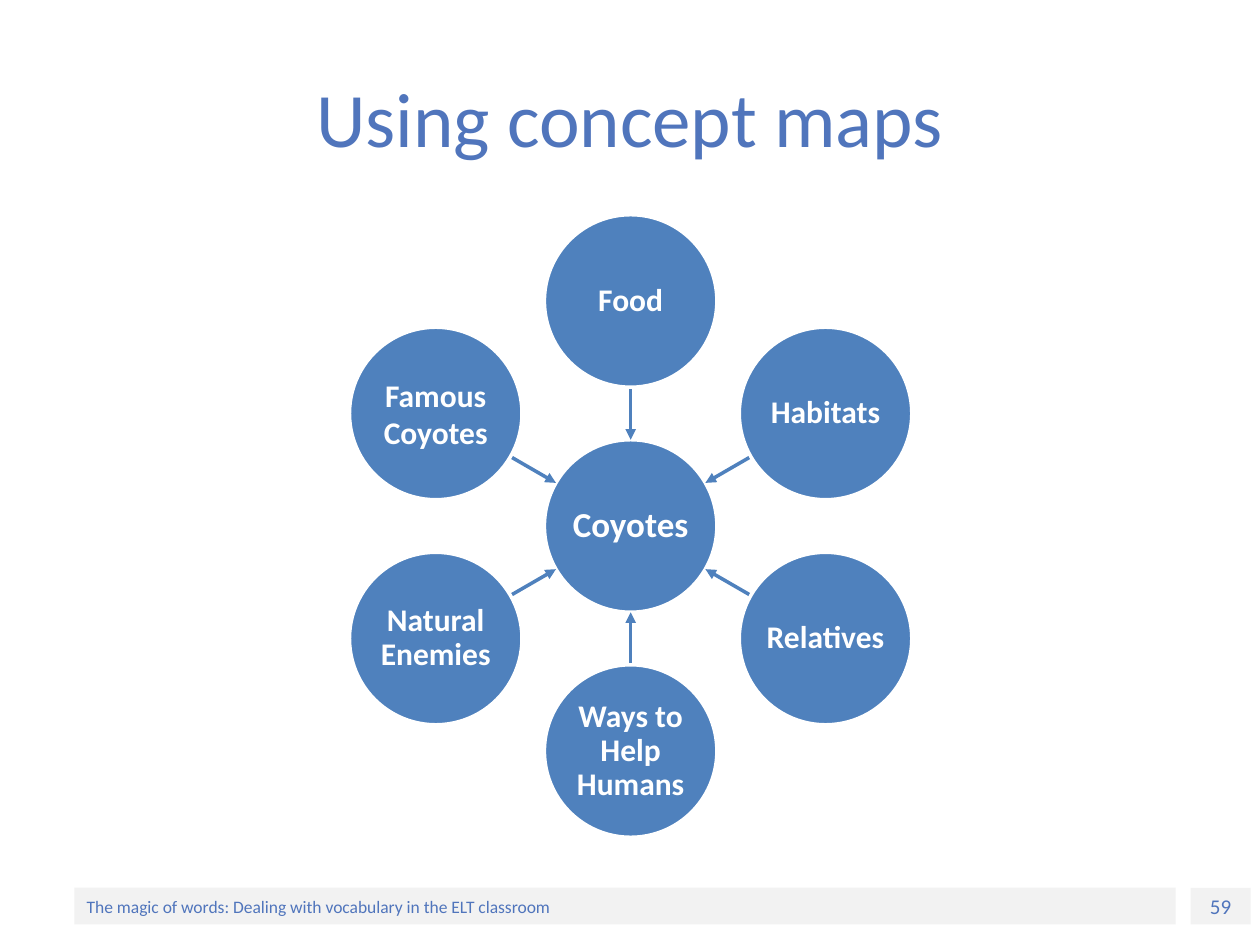
import math
from dataclasses import dataclass

import pptx
import pptx.dml.color
import pptx.enum.shapes
import pptx.enum.text
import pptx.util
from lxml import etree
from pptx.oxml.ns import qn

Pt = pptx.util.Pt
Align = pptx.enum.text.PP_ALIGN
Anchor = pptx.enum.text.MSO_ANCHOR
ShapeKind = pptx.enum.shapes.MSO_SHAPE


@dataclass(frozen=True)
class Theme:
    font: str = "Calibri"
    heading: str = "5075BC"
    circle: str = "4F81BD"
    white: str = "FFFFFF"
    bar: str = "F2F2F2"
    title_size: int = 44
    hub_size: int = 20
    topic_size: int = 18
    number_size: int = 12
    footer_size: int = 10
    line_width: int = 2


def rgb(value):
    return pptx.dml.color.RGBColor.from_string(value)


def write_text(shape, text, *, font, size, color, bold=False, align=Align.LEFT,
               anchor=Anchor.MIDDLE, spacing=None, inset=None):
    frame = shape.text_frame
    frame.word_wrap = True
    frame.vertical_anchor = anchor
    if inset is not None:
        frame.margin_left = frame.margin_right = Pt(inset)
        frame.margin_top = frame.margin_bottom = Pt(inset)
    paragraph = frame.paragraphs[0]
    paragraph.alignment = align
    if spacing:
        paragraph.line_spacing = spacing
    run = paragraph.add_run()
    run.text = text
    run.font.name = font
    run.font.size = Pt(size)
    run.font.bold = bold
    run.font.color.rgb = rgb(color)


class SlideBuilder:
    def __init__(self, slide, theme):
        self.slide = slide
        self.theme = theme

    def title(self, text, left, top, width, height):
        box = self.slide.shapes.add_textbox(Pt(left), Pt(top), Pt(width), Pt(height))
        write_text(box, text, font=self.theme.font, size=self.theme.title_size,
                   color=self.theme.heading, align=Align.CENTER)

    def filled_shape(self, kind, fill, left, top, width, height):
        shape = self.slide.shapes.add_shape(kind, Pt(left), Pt(top), Pt(width), Pt(height))
        shape.shadow.inherit = False
        shape.fill.solid()
        shape.fill.fore_color.rgb = rgb(fill)
        shape.line.fill.background()
        return shape

    def bar(self, text, left, top, width, height, **text_format):
        shape = self.filled_shape(ShapeKind.RECTANGLE, self.theme.bar, left, top, width, height)
        write_text(shape, text, font=self.theme.font, color=self.theme.heading, **text_format)

    def circle(self, text, center, diameter, size, spacing=0.9):
        x, y = center
        shape = self.filled_shape(ShapeKind.OVAL, self.theme.circle,
                                  x - diameter / 2, y - diameter / 2, diameter, diameter)
        shape.line.color.rgb = rgb(self.theme.white)
        shape.line.width = Pt(self.theme.line_width)
        write_text(shape, text, font=self.theme.font, size=size, color=self.theme.white,
                   bold=True, align=Align.CENTER, spacing=spacing, inset=0.7)

    def arrow(self, start, end):
        connector = self.slide.shapes.add_connector(
            pptx.enum.shapes.MSO_CONNECTOR.STRAIGHT, *map(Pt, start + end))
        connector.line.color.rgb = rgb(self.theme.circle)
        connector.line.width = Pt(self.theme.line_width)
        etree.SubElement(connector.line._get_or_add_ln(), qn("a:tailEnd"), type="triangle")
        etree.SubElement(connector._element.spPr, qn("a:effectLst"))


def main():
    presentation = pptx.Presentation()
    presentation.slide_width, presentation.slide_height = Pt(720), Pt(540)
    slide = presentation.slides.add_slide(presentation.slide_layouts[6])
    theme = Theme()
    builder = SlideBuilder(slide, theme)

    # Footer and slide number
    builder.bar("59", 680.4, 507.3, 34.2, 21, size=theme.number_size,
                align=Align.CENTER, anchor=Anchor.TOP)
    builder.bar("The magic of words: Dealing with vocabulary in the ELT classroom",
                42.5, 507.2, 629.3, 21, size=theme.footer_size)

    # Title
    builder.title("Using concept maps", 36, 21.6, 648, 90)

    # Concept map: topics run clockwise from the top around the hub
    hub_x, hub_y = 360.4, 300.6
    diameter, orbit = 98.6, 128.6
    topics = ["Food", "Habitats", "Relatives", "Ways to Help Humans",
              "Natural Enemies", "Famous Coyotes"]
    line_spacing = {"Famous Coyotes": 1.0}

    builder.circle("Coyotes", (hub_x, hub_y), diameter, theme.hub_size)
    for index, topic in enumerate(topics):
        angle = 2 * math.pi * index / len(topics)

        def point(distance):
            return (hub_x + distance * math.sin(angle), hub_y - distance * math.cos(angle))

        builder.arrow(point(orbit - diameter / 2), point(diameter / 2))
        builder.circle(topic, point(orbit), diameter, theme.topic_size,
                       line_spacing.get(topic, 0.9))

    presentation.save("out.pptx")


if __name__ == "__main__":
    main()
